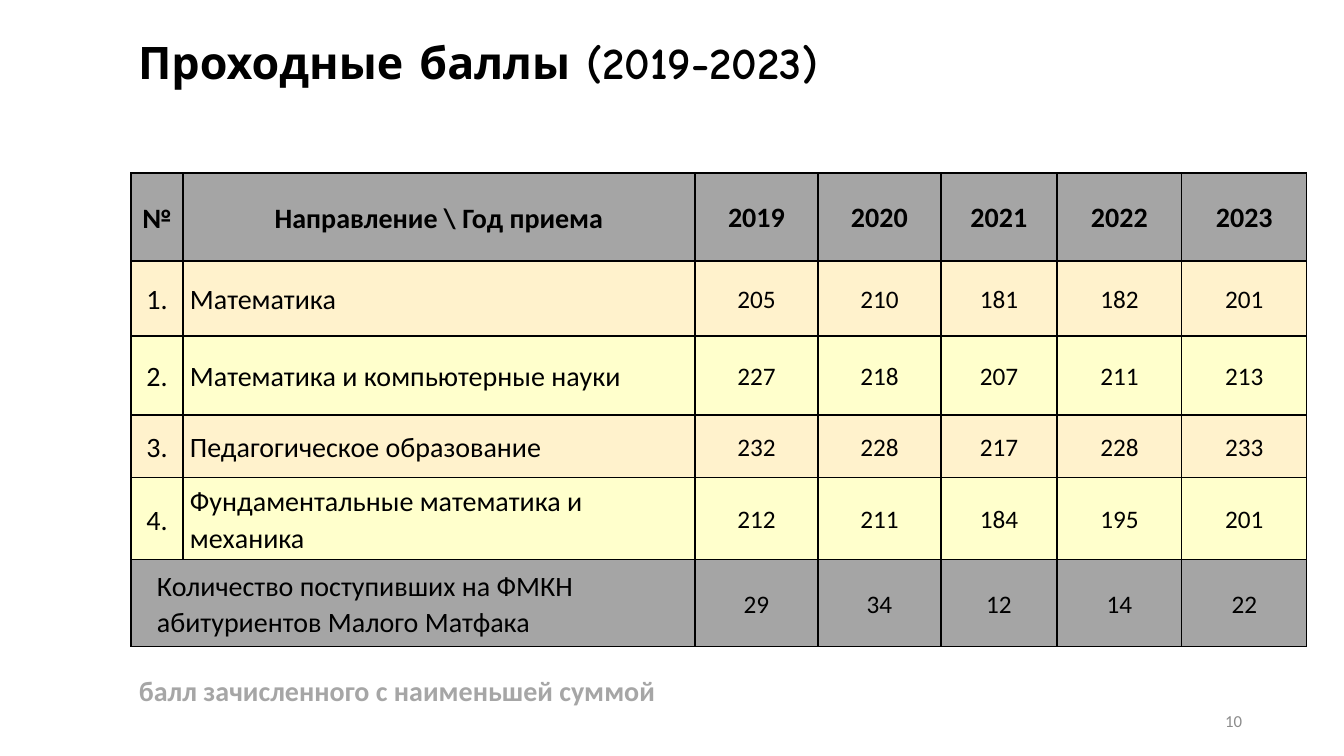
from lxml.etree import SubElement
from pptx import Presentation
from pptx.dml.color import RGBColor
from pptx.enum.text import MSO_ANCHOR, MSO_AUTO_SIZE, PP_ALIGN
from pptx.oxml.ns import qn
from pptx.util import Emu, Pt

EMU_PER_PX = 914400 / 100.8

COLORS = {
    "text": "000000",
    "band": "A5A5A5",
    "odd": "FFF2CC",
    "even": "FFFFCC",
    "note": "A6A6A6",
    "number": "8C8C8C",
}

TITLE_BOX = (128, 13, 1130, 103)
TABLE_BOX = (131, 173)
NOTE_BOX = (129, 669, 570, 44)
NUMBER_BOX = (950, 701, 302, 40)

COLUMN_WIDTHS = [52, 512, 123, 123, 116, 125, 125]
ROW_HEIGHTS = [88, 75, 79, 63, 82, 87]

YEARS = ["2019", "2020", "2021", "2022", "2023"]
PROGRAMMES = {
    "Математика": [205, 210, 181, 182, 201],
    "Математика и компьютерные науки": [227, 218, 207, 211, 213],
    "Педагогическое образование": [232, 228, 217, 228, 233],
    "Фундаментальные математика и механика": [212, 211, 184, 195, 201],
}
TOTAL_LABEL = "Количество поступивших на ФМКН абитуриентов Малого Матфака"
TOTALS = [29, 34, 12, 14, 22]

CELL_PARAGRAPH = {"line_spacing": 1.07, "space_after": Pt(8)}
LABEL_MARGINS = {"margin_left": 7, "margin_right": 7, "margin_top": 1, "margin_bottom": 0}
VALUE_MARGINS = dict.fromkeys(LABEL_MARGINS, 0)


def px(length):
    return Emu(round(length * EMU_PER_PX))


def set_attributes(target, values):
    for name, value in values.items():
        setattr(target, name, value)


def write_text(text_frame, text, paragraph_format, size, color="text", bold=False, font="Calibri"):
    text_frame.text = text
    paragraph = text_frame.paragraphs[0]
    set_attributes(paragraph, paragraph_format)
    run_font = paragraph.runs[0].font
    set_attributes(run_font, {"name": font, "size": Pt(size), "bold": bold})
    run_font.color.rgb = RGBColor.from_string(COLORS[color])


def add_title(slide, box):
    title = slide.shapes.title
    set_attributes(title, dict(zip(("left", "top", "width", "height"), map(px, box))))
    set_attributes(title.text_frame, {
        "word_wrap": True,
        "auto_size": MSO_AUTO_SIZE.NONE,
        "vertical_anchor": MSO_ANCHOR.MIDDLE,
    })
    write_text(title.text_frame, "Проходные баллы (2019-2023)",
               {"alignment": PP_ALIGN.LEFT, "line_spacing": 0.9},
               32, bold=True, font="Comic Neue")


def add_text(slide, box, text, anchor, alignment, size, color, bold=False):
    text_frame = slide.shapes.add_textbox(*map(px, box)).text_frame
    set_attributes(text_frame, {"word_wrap": True, "vertical_anchor": anchor})
    write_text(text_frame, text, {"alignment": alignment}, size, color, bold)


def add_borders(cell):
    """Draw a thin line on all four sides; must run before the cell is filled."""
    properties = cell._tc.get_or_add_tcPr()
    for side in ("lnL", "lnR", "lnT", "lnB"):
        line = SubElement(properties, qn(f"a:{side}"), w=str(Pt(1)))
        fill = SubElement(line, qn("a:solidFill"))
        SubElement(fill, qn("a:srgbClr"), val=COLORS["text"])


def table_rows():
    """Return the rows as lists of texts, from the header to the totals."""
    rows = [["№", "Направление \\ Год приема", *YEARS]]
    for number, (programme, scores) in enumerate(PROGRAMMES.items(), 1):
        rows.append([f"{number}.", programme, *map(str, scores)])
    rows.append([TOTAL_LABEL, "", *map(str, TOTALS)])
    return rows


def format_cell(cell, text, row, column):
    is_header = row == 0
    is_total = row == len(ROW_HEIGHTS) - 1
    is_value = column > 1
    add_borders(cell)
    cell.fill.solid()
    fill = "band" if is_header or is_total else ("odd" if row % 2 else "even")
    cell.fill.fore_color.rgb = RGBColor.from_string(COLORS[fill])
    cell.vertical_anchor = MSO_ANCHOR.MIDDLE
    margins = VALUE_MARGINS if is_value else LABEL_MARGINS
    set_attributes(cell, {name: px(margin) for name, margin in margins.items()})
    if not text:
        return
    is_left = not is_header and (column == 1 or is_total and not is_value)
    alignment = PP_ALIGN.LEFT if is_left else PP_ALIGN.CENTER
    size = 18 if is_value and not is_header else 20
    write_text(cell.text_frame, text, {**CELL_PARAGRAPH, "alignment": alignment},
               size, bold=is_header)
    if is_total and column == 0:
        cell.text_frame.paragraphs[0]._p.get_or_add_pPr().set("marL", str(px(19)))


def add_score_table(slide, box):
    rows = table_rows()
    table = slide.shapes.add_table(
        len(rows), len(COLUMN_WIDTHS), *map(px, box),
        px(sum(COLUMN_WIDTHS)), px(sum(ROW_HEIGHTS))).table
    set_attributes(table, {"first_row": False, "horz_banding": False})
    for column, width in zip(table.columns, COLUMN_WIDTHS):
        column.width = px(width)
    for row, height in zip(table.rows, ROW_HEIGHTS):
        row.height = px(height)
    last_row = len(rows) - 1
    table.cell(last_row, 0).merge(table.cell(last_row, 1))
    for row, texts in enumerate(rows):
        for column, text in enumerate(texts):
            format_cell(table.cell(row, column), text, row, column)


def main():
    presentation = Presentation()
    set_attributes(presentation, {"slide_width": px(1344), "slide_height": px(756)})
    slide = presentation.slides.add_slide(presentation.slide_layouts[5])
    add_text(slide, NUMBER_BOX, "10", MSO_ANCHOR.MIDDLE, PP_ALIGN.RIGHT, 12, "number")
    add_title(slide, TITLE_BOX)
    add_score_table(slide, TABLE_BOX)
    add_text(slide, NOTE_BOX, "балл зачисленного с наименьшей суммой",
             MSO_ANCHOR.TOP, PP_ALIGN.LEFT, 20, "note", bold=True)
    presentation.save("out.pptx")


if __name__ == "__main__":
    main()
